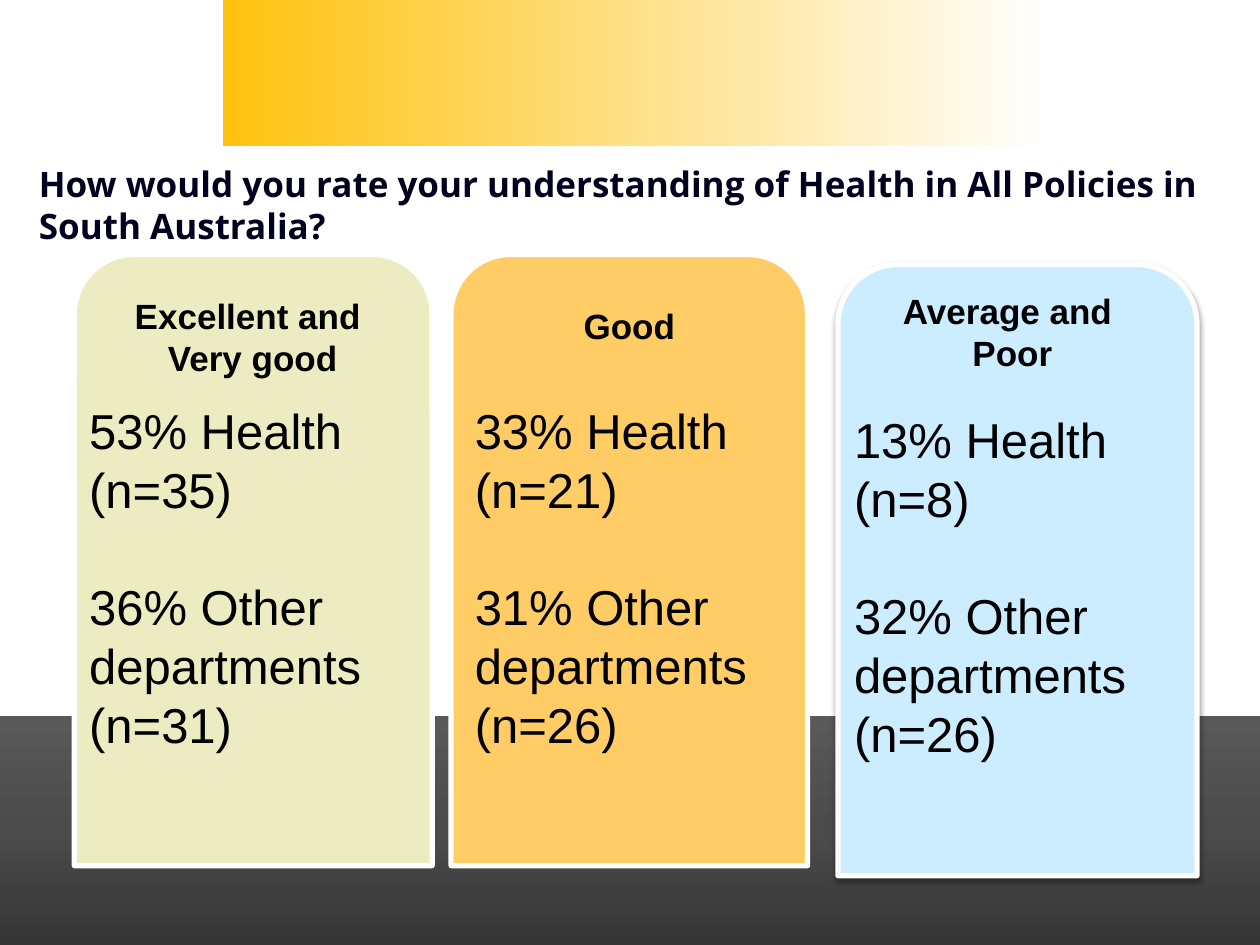
from lxml.etree import SubElement
from pptx import Presentation
from pptx.dml.color import RGBColor
from pptx.enum.shapes import MSO_SHAPE
from pptx.enum.text import MSO_ANCHOR, PP_ALIGN
from pptx.oxml import parse_xml
from pptx.oxml.ns import nsdecls, qn
from pptx.util import Inches, Pt

WHITE = RGBColor(0xFF, 0xFF, 0xFF)
BLACK = RGBColor(0x00, 0x00, 0x00)
NAVY = RGBColor(0x00, 0x00, 0x1F)
GOLD = RGBColor(0xFE, 0xC2, 0x0F)
CHARCOAL = RGBColor(0x35, 0x35, 0x35)
SLATE = RGBColor(0x4B, 0x4B, 0x4B)
GREY = RGBColor(0x59, 0x59, 0x59)
OLIVE = RGBColor(0xED, 0xEB, 0xC1)
ORANGE = RGBColor(0xFF, 0xCC, 0x66)
SKY = RGBColor(0xCC, 0xEC, 0xFF)

RATINGS = [
    {
        "color": OLIVE,
        "card": (0.59, 2.02, 2.84, 4.85),
        "strips": [(0.61, 2.98, 2.74, 0.86)],
        "cap": (0.75, 2.15, 2.51, 1.04),
        "heading": ["Excellent and ", "Very good"],
        "heading_place": (0.9, 2.29, 2.21, 1.18),
        "health": ["53% Health", "(n=35)"],
        "others": ["36% Other", "departments", "(n=31)"],
        "answers_place": (0.61, 3.13, 5, 2.93),
        "raised": False,
    },
    {
        "color": ORANGE,
        "card": (3.58, 2.02, 2.83, 4.85),
        "strips": [(3.62, 2.98, 2.73, 0.49), (5.89, 5.94, 0.23, 0.86)],
        "cap": (3.75, 2.15, 2.5, 1.06),
        "heading": ["Good"],
        "heading_place": (3.86, 2.37, 2.27, 0.84),
        "health": ["33% Health", "(n=21)"],
        "others": ["31% Other", "departments", "(n=26)"],
        "answers_place": (3.67, 3.13, 5, 2.93),
        "raised": False,
    },
    {
        "color": SKY,
        "card": (6.65, 2.1, 2.85, 4.85),
        "strips": [(6.71, 3.06, 2.75, 0.49)],
        "cap": (6.82, 2.23, 2.52, 1.06),
        "heading": ["Average and ", "Poor"],
        "heading_place": (6.81, 2.25, 2.45, 0.77),
        "health": ["13% Health", "(n=8)"],
        "others": ["32% Other", "departments", "(n=26)"],
        "answers_place": (6.68, 3.2, 5, 2.93),
        "raised": True,
    },
]


class SurveyPage:
    body_font = "Arial"
    title_font = "Open Sans"
    line_height = 1.2

    def __init__(self, deck):
        self.page = deck.slides.add_slide(deck.slide_layouts[6])

    def block(self, place, color, kind=MSO_SHAPE.RECTANGLE, parent=None):
        owner = parent or self.page
        shape = owner.shapes.add_shape(kind, *map(Inches, place))
        shape.shadow.inherit = False
        shape.fill.solid()
        shape.fill.fore_color.rgb = color
        shape.line.fill.background()
        return shape

    def gradient_band(self, place, stops, angle):
        band = self.block(place, WHITE)
        solid = band.element.spPr.find(qn("a:solidFill"))
        gradient = parse_xml(f'<a:gradFill {nsdecls("a")} rotWithShape="1"/>')
        stop_list = SubElement(gradient, qn("a:gsLst"))
        for percent, color in stops:
            stop = SubElement(stop_list, qn("a:gs"), pos=str(percent * 1000))
            SubElement(stop, qn("a:srgbClr"), val=str(color))
        SubElement(gradient, qn("a:lin"), ang=str(angle * 60000), scaled="0")
        solid.getparent().replace(solid, gradient)

    def text(self, place, lines, size, font=None, color=BLACK, bold=False,
             align=PP_ALIGN.LEFT, anchor=MSO_ANCHOR.TOP, gap_before=None):
        box = self.page.shapes.add_textbox(*map(Inches, place))
        frame = box.text_frame
        frame.word_wrap = True
        frame.vertical_anchor = anchor
        frame.text = "\n".join(lines)
        pitch = Pt(size * self.line_height)
        for index, para in enumerate(frame.paragraphs):
            para.alignment = align
            para.line_spacing = pitch
            if index == gap_before:
                para.space_before = pitch
            for span in para.runs:
                span.font.name = font or self.body_font
                span.font.size = Pt(size)
                span.font.bold = bold
                span.font.color.rgb = color

    def soft_shadow(self, shape):
        effects = shape.element.spPr.find(qn("a:effectLst"))
        shadow = SubElement(
            effects, qn("a:outerShdw"), blurRad=str(Pt(3.1)), dist=str(Pt(1.8)),
            dir=str(90 * 60000), rotWithShape="0")
        color = SubElement(shadow, qn("a:srgbClr"), val=str(BLACK))
        SubElement(color, qn("a:alpha"), val="35000")

    def rating_card(self, rating):
        group = self.page.shapes.add_group_shape()
        color = rating["color"]
        rounded = MSO_SHAPE.ROUND_2_SAME_RECTANGLE
        card = self.block(rating["card"], color, rounded, group)
        card.line.color.rgb = WHITE
        card.line.width = Pt(3)
        if rating["raised"]:
            self.soft_shadow(card)
        for strip in rating["strips"]:
            self.block(strip, color, parent=group)
        cap = self.block(rating["cap"], color, rounded, group)
        cap.adjustments[0] = 0.46
        self.text(rating["heading_place"], rating["heading"], 20, bold=True,
                  align=PP_ALIGN.CENTER)

    def rating_answers(self, rating):
        health = rating["health"]
        self.text(rating["answers_place"], health + rating["others"], 28,
                  gap_before=len(health))


def main():
    deck = Presentation()
    deck.slide_width = Inches(10)
    deck.slide_height = Inches(7.5)
    survey = SurveyPage(deck)
    survey.gradient_band((1.77, 0, 6.56, 1.16), [(0, GOLD), (100, WHITE)], 0)
    survey.gradient_band((0, 5.68, 10, 1.82),
                         [(0, CHARCOAL), (50, SLATE), (100, GREY)], 270)
    survey.text(
        (0.21, 1.23, 9.79, 0.78),
        ["How would you rate your understanding of Health in All Policies in "
         "South Australia?"],
        20, font=survey.title_font, color=NAVY, bold=True,
        anchor=MSO_ANCHOR.MIDDLE)
    for rating in RATINGS:
        survey.rating_card(rating)
    for rating in RATINGS:
        survey.rating_answers(rating)
    deck.save("out.pptx")


if __name__ == "__main__":
    main()
